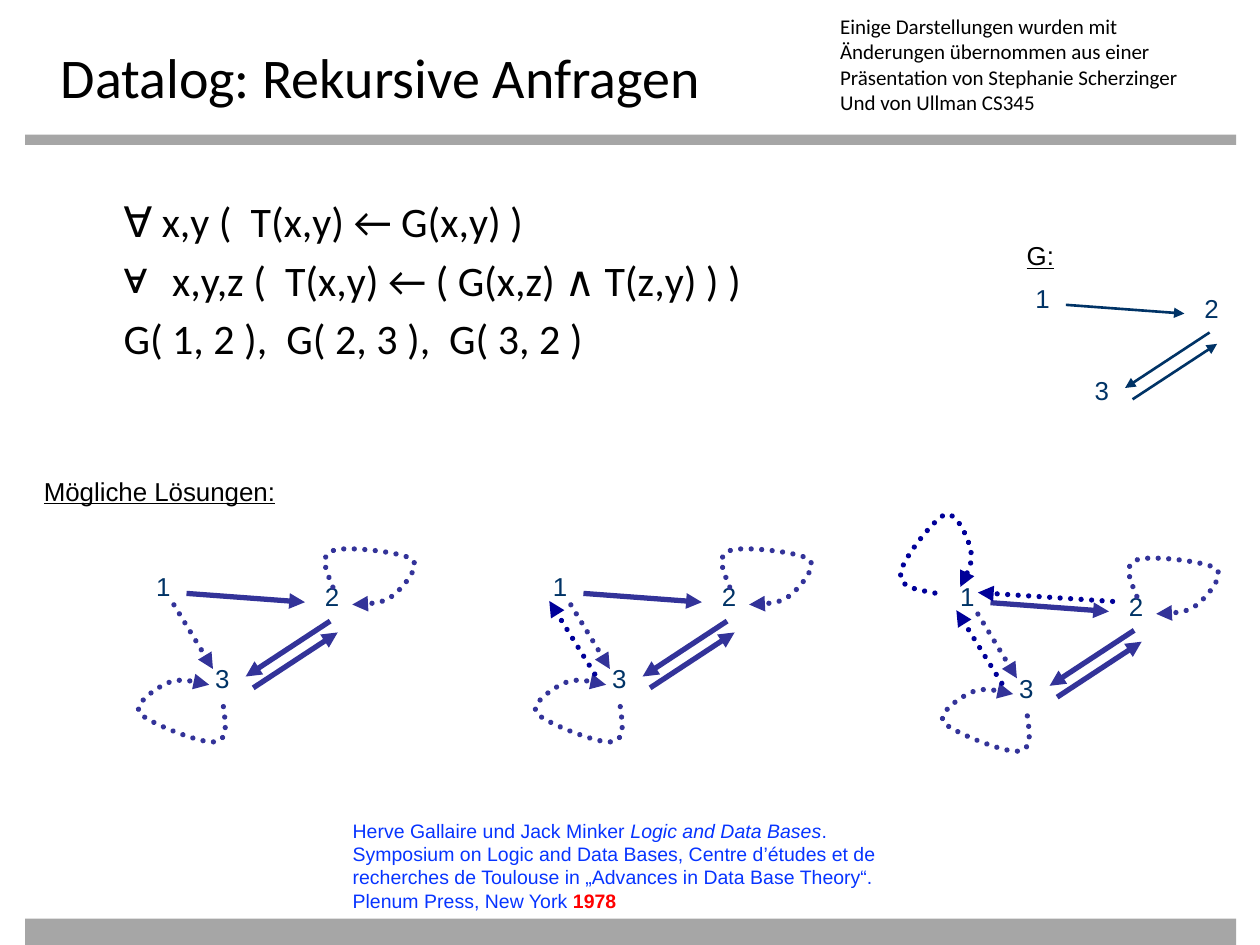
import lxml.etree
import pptx
import pptx.dml.color
import pptx.enum.dml
import pptx.enum.shapes
import pptx.enum.text
import pptx.oxml.ns
import pptx.util

Pt = pptx.util.Pt
qn = pptx.oxml.ns.qn
BLACK, GREY, NAVY = "000000", "A6A6A6", "003366"
VIOLET, INK, BLUE, RED = "333399", "000099", "0734FF", "FF0000"
NODES = [("1", 0, 0), ("2", 96.5, 5.8), ("3", 33.8, 52.6)]
EDGES = [(24.5, 14.4, 92.2, 19.4), (106.6, 30.2, 58.3, 61.9),
         (62.6, 68.4, 110.9, 36.7)]
CURVE = [(8, 24), (4, 14), (0, 6), (8, 3), (15, 0), (48, 4), (53, 8),
         (58, 12), (48, 24), (42, 29), (36, 33), (27, 34), (19, 34)]


def rgb(code):
    """Turn a hex string into a colour."""
    return pptx.dml.color.RGBColor.from_string(code)


class Deck:
    """Hold the style and the current slide."""

    def __init__(self):
        """Start a deck with one slide."""
        self.file = pptx.Presentation()
        self.file.slide_width, self.file.slide_height = Pt(720), Pt(540)
        self.slide = self.file.slides.add_slide(self.file.slide_layouts[1])
        self.shapes = self.slide.shapes

    def font(self, item, size, name="Arial", color=BLACK):
        """Set the font of a paragraph."""
        font = item.font
        font.size, font.name = Pt(size), name
        font.color.rgb = rgb(color)
        return font

    def bar(self, top, high):
        """Draw a grey bar across the slide."""
        bar = self.shapes.add_shape(
            pptx.enum.shapes.MSO_SHAPE.RECTANGLE,
            Pt(14.4), Pt(top), Pt(692), Pt(high))
        bar.shadow.inherit = False
        bar.fill.solid()
        bar.fill.fore_color.rgb = rgb(GREY)
        bar.line.fill.background()

    def place(self, holder, left, top, wide, high):
        """Move a placeholder and return its text frame."""
        holder.left, holder.top = Pt(left), Pt(top)
        holder.width, holder.height = Pt(wide), Pt(high)
        frame = holder.text_frame
        frame.vertical_anchor = pptx.enum.text.MSO_ANCHOR.TOP
        frame.auto_size = pptx.enum.text.MSO_AUTO_SIZE.NONE
        return frame

    def title(self, text):
        """Fill the title."""
        frame = self.place(self.shapes.title, 27.4, 20.9, 664.6, 37.4)
        frame.text = text
        item = frame.paragraphs[0]
        item.alignment = pptx.enum.text.PP_ALIGN.LEFT
        self.font(item, 32, "Calibri")

    def body(self, rows):
        """Fill the body with pairs of bullet and text."""
        frame = self.place(self.slide.placeholders[1], 27.4, 108, 664.6, 361.4)
        frame.text = "\n".join(text for _, text in rows)
        for index, (mark, _) in enumerate(rows):
            item = frame.paragraphs[index]
            item.level = 1
            item.space_before = Pt(4.8 if index else 0)
            props = item._p.get_or_add_pPr()
            props.set("marL", str(Pt(58.3)))
            props.set("indent", str(Pt(-22.3)))
            if mark:
                lxml.etree.SubElement(props, qn("a:buChar")).set("char", mark)
            else:
                lxml.etree.SubElement(props, qn("a:buNone"))
            self.font(item, 24, "Calibri")

    def text(self, left, top, wide, high, wrap=True):
        """Add a text box and return its frame."""
        box = self.shapes.add_textbox(Pt(left), Pt(top), Pt(wide), Pt(high))
        frame = box.text_frame
        frame.word_wrap = wrap
        frame.auto_size = pptx.enum.text.MSO_AUTO_SIZE.SHAPE_TO_FIT_TEXT
        return frame

    def label(self, text, left, top, wide=23, color=BLACK, under=False):
        """Add a short label on one line."""
        item = self.text(left, top, wide, 23.3, False).paragraphs[0]
        item.text = text
        item.line_spacing = 0.9
        font = self.font(item, 14.8, color=color)
        if under:
            font.underline = True

    def note(self, rows):
        """Add the note on where the content is from."""
        frame = self.text(473, 4.3, 235.4, 65.5)
        frame.text = "\n".join(rows)
        for item in frame.paragraphs:
            self.font(item, 12, "Calibri")

    def cite(self, parts):
        """Add the citation from pairs of text and style."""
        item = self.text(194.4, 464.4, 332.6, 61.2).paragraphs[0]
        self.font(item, 11.1, color=BLUE)
        for text, style in parts:
            run = item.add_run()
            run.text = text
            if style == "italic":
                run.font.italic = True
            elif style == "year":
                run.font.bold = True
                run.font.color.rgb = rgb(RED)

    def stroke(self, shape, color, width, dots):
        """Style a line and end it with an arrowhead."""
        shape.line.color.rgb = rgb(color)
        shape.line.width = Pt(width)
        line = shape._element.spPr.find(qn("a:ln"))
        if dots:
            shape.line.dash_style = pptx.enum.dml.MSO_LINE.ROUND_DOT
            line.set("cap", "rnd")
        lxml.etree.SubElement(line, qn("a:tailEnd")).set("type", "triangle")

    def arrow(self, base, ends, color=VIOLET, width=3, dots=False):
        """Draw a straight arrow relative to a base point."""
        x, y = base
        a, b, c, d = ends
        link = self.shapes.add_connector(
            pptx.enum.shapes.MSO_CONNECTOR.STRAIGHT,
            Pt(x + a), Pt(y + b), Pt(x + c), Pt(y + d))
        self.stroke(link, color, width, dots)
        lxml.etree.SubElement(link._element.spPr, qn("a:effectLst"))

    def loop(self, base, box, turn=0, color=VIOLET):
        """Draw a dotted loop from a node to itself."""
        left, top, wide, high = box
        form = self.shapes.build_freeform(*CURVE[0], scale=Pt(1))
        form.add_line_segments(CURVE[1:], close=False)
        loop = form.convert_to_shape()
        steps = list(loop._element.iter(qn("a:lnTo")))
        for start in range(0, len(steps), 3):
            trio = steps[start:start + 3]
            bend = lxml.etree.SubElement(trio[0].getparent(), qn("a:cubicBezTo"))
            for step in trio:
                bend.append(step[0])
                step.getparent().remove(step)
        loop.left, loop.top = Pt(base[0] + left), Pt(base[1] + top)
        loop.width, loop.height = Pt(wide), Pt(high)
        loop.rotation = turn
        loop.shadow.inherit = False
        loop.fill.background()
        self.stroke(loop, color, 3, True)

    def graph(self, base, color=VIOLET, width=3):
        """Draw the three nodes and the given edges."""
        for name, x, y in NODES:
            self.label(name, base[0] + x, base[1] + y, color=NAVY)
        for ends in EDGES:
            self.arrow(base, ends, color, width)

    def model(self, base, back=False, full=False):
        """Draw one solution with its derived edges."""
        self.graph(base)
        self.arrow(base, (17.3, 20.9, 39.6, 57.6), dots=True)
        self.loop(base, (100.1, -13, 58.3, 33.8))
        self.loop(base, (-5.8, 63.4, 58.3, 33.8), 195)
        if back:
            self.arrow(base, (31, 60.5, 5, 18.7), INK, dots=True)
        if full:
            self.loop(base, (-31, -30.2, 54, 36.7), 300, INK)
            self.arrow(base, (94.3, 13.7, 17.3, 8.6), INK, dots=True)


def main():
    """Build the slide and save it."""
    deck = Deck()
    deck.bar(77, 5.8)
    deck.bar(524.9, 15.1)
    deck.title("Datalog: Rekursive Anfragen")
    deck.body([("", "∀ x,y (  T(x,y) ← G(x,y) )"),
               ("∀", " x,y,z (  T(x,y) ← ( G(x,z) ∧ T(z,y) ) )"),
               ("", "G( 1, 2 ),  G( 2, 3 ),  G( 3, 2 )")])
    deck.label("Mögliche Lösungen:", 18, 270, 148.3, under=True)
    deck.label("G:", 579.6, 135.4, 30.2, under=True)
    deck.graph((584.6, 159.8), NAVY, 1.5)
    deck.model((82.1, 324.7))
    deck.model((308.9, 324.7), back=True)
    deck.model((541.5, 330), back=True, full=True)
    deck.cite([("Herve Gallaire und Jack Minker ", ""),
               ("Logic and Data Bases", "italic"),
               (". Symposium on Logic and Data Bases, Centre d’études et de "
                "recherches de Toulouse in „Advances in Data Base Theory“. "
                "Plenum Press, New York ", ""),
               ("1978", "year")])
    deck.note(["Einige Darstellungen wurden mit Änderungen übernommen aus "
               "einer Präsentation von Stephanie Scherzinger",
               "Und von Ullman CS345"])
    deck.file.save("out.pptx")


if __name__ == "__main__":
    main()
